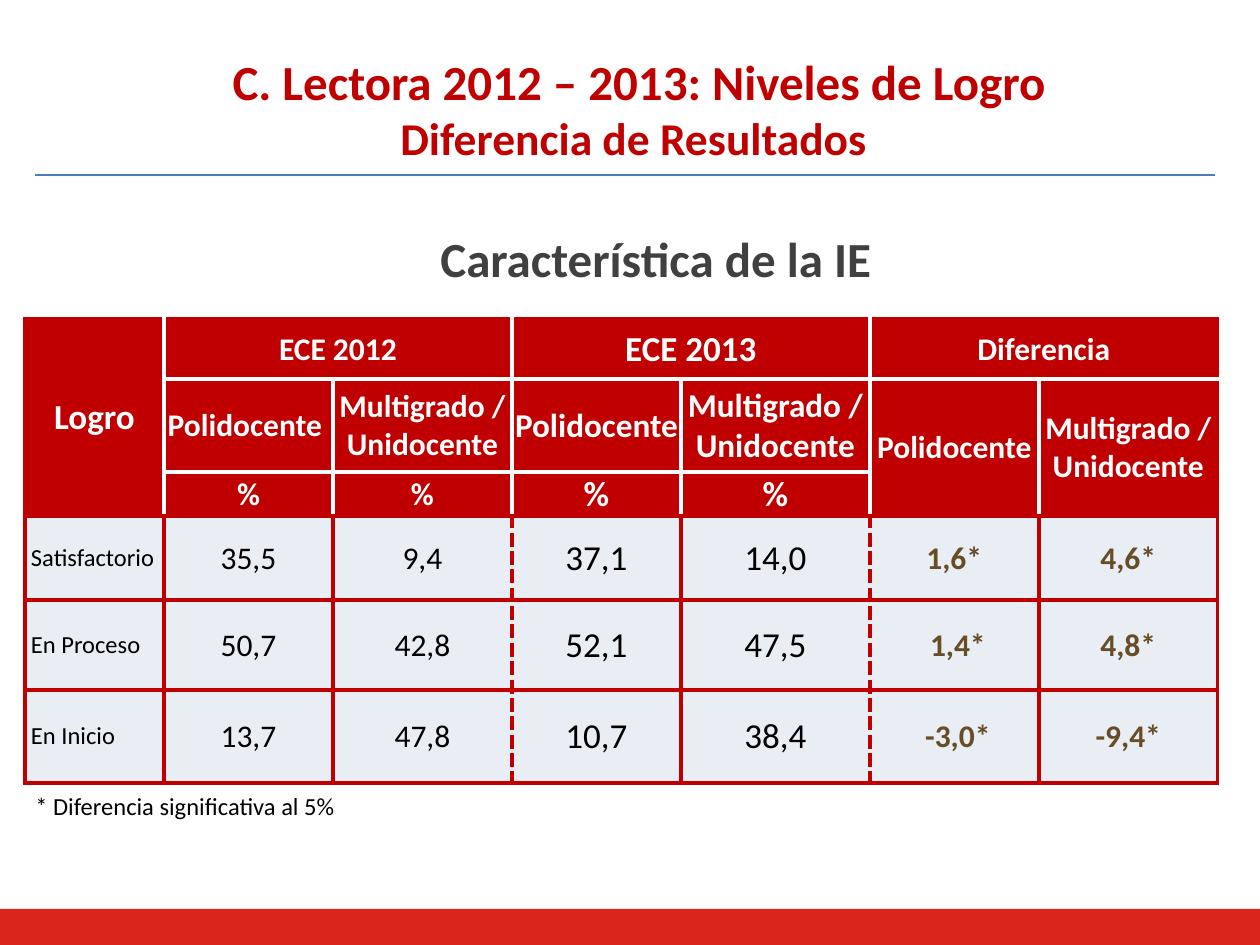
from lxml.etree import SubElement
from pptx import Presentation
from pptx.dml.color import RGBColor
from pptx.enum.shapes import MSO_CONNECTOR, MSO_SHAPE
from pptx.enum.text import MSO_ANCHOR as ANCHOR, MSO_AUTO_SIZE as AUTO_SIZE, PP_ALIGN as ALIGN
from pptx.oxml.ns import qn
from pptx.util import Pt

PX = 914400 // 126
WIDTH, HEIGHT = 1260, 945
FONT = "Calibri"
COLORS = {
    "red": "C00000", "band": "DA251D", "rule": "4B7EBC", "heading": "404040",
    "white": "FFFFFF", "black": "000000", "body": "E9EDF4", "difference": "674D26",
}

# Content
TITLE = [("C. Lectora 2012 – 2013: Niveles de Logro", 28), ("Diferencia de Resultados ", 26)]
HEADING = "Característica de la IE"
FOOTNOTE = "* Diferencia significativa al 5%"

MULTI = "Multigrado / Unidocente"
HEADER = [  # text and size in each cell; None is covered by a merge
    [("Logro", 20), ("ECE 2012", 18), None, ("ECE 2013", 20), None, ("Diferencia", 18), None],
    [None, ("Polidocente ", 18), (MULTI, 18), ("Polidocente ", 19), (MULTI, 19),
     ("Polidocente", 18), (MULTI, 18)],
    [None, ("%", 18), ("%", 18), ("%", 20), ("%", 20), None, None],
]
RESULTS = [
    ["Satisfactorio", "35,5", "9,4", "37,1", "14,0", "1,6*", "4,6*"],
    ["En Proceso", "50,7", "42,8", "52,1", "47,5", " 1,4*", "4,8*"],
    ["En Inicio", "13,7", "47,8", "10,7", "38,4", " -3,0*", "-9,4*"],
]
RESULT_SIZES = [14, 18, 18, 20, 20, 18, 18]
MERGES = [((0, 0), (2, 0)), ((0, 1), (0, 2)), ((0, 3), (0, 4)), ((0, 5), (0, 6)),
          ((1, 5), (2, 5)), ((1, 6), (2, 6))]
COLUMN_WIDTHS = [139, 169, 179, 169, 189, 169, 179]
ROW_HEIGHTS = [60, 93, 44, 84, 90, 93]
TABLE_LEFT, TABLE_TOP = 25, 319
DASHED_EDGES = (3, 5)


def rgb(name):
    return RGBColor.from_string(COLORS[name])


def write(frame, lines, color="black", bold=False, align=ALIGN.LEFT):
    for i, (text, size) in enumerate(lines):
        paragraph = frame.add_paragraph() if i else frame.paragraphs[0]
        paragraph.alignment = align
        run = paragraph.add_run()
        run.text = text
        run.font.name, run.font.size, run.font.bold = FONT, Pt(size), bold
        run.font.color.rgb = rgb(color)


def add_text(slide, box, lines, wrap=True, anchor=ANCHOR.TOP, fit=AUTO_SIZE.NONE, **style):
    frame = slide.shapes.add_textbox(*(v * PX for v in box)).text_frame
    frame.word_wrap, frame.vertical_anchor, frame.auto_size = wrap, anchor, fit
    write(frame, lines, **style)


def vertical_edge(row, x):
    """Colour and dash of the edge left of column x."""
    if 0 < x < len(COLUMN_WIDTHS):
        if row >= len(HEADER):
            return "red", "sysDash" if x in DASHED_EDGES else "solid"
        if row > 0 or x % 2:
            return "white", "solid"
    return "red", "solid"


def horizontal_edge(y, col):
    """Colour and dash of the edge above row y."""
    white = (y == 1 and col > 0) or (y == 2 and 0 < col < 5)
    return "white" if white else "red", "solid"


def draw_borders(cell, row, col):
    edges = {"lnL": vertical_edge(row, col), "lnR": vertical_edge(row, col + 1),
             "lnT": horizontal_edge(row, col), "lnB": horizontal_edge(row + 1, col)}
    properties = cell._tc.get_or_add_tcPr()
    for tag, (color, dash) in edges.items():
        line = SubElement(properties, qn("a:" + tag), w=str(Pt(2.25)))
        SubElement(SubElement(line, qn("a:solidFill")), qn("a:srgbClr"), val=COLORS[color])
        SubElement(line, qn("a:prstDash"), val=dash)


def add_results_table(slide):
    rows = HEADER + [list(zip(row, RESULT_SIZES)) for row in RESULTS]
    table = slide.shapes.add_table(
        len(rows), len(COLUMN_WIDTHS), TABLE_LEFT * PX, TABLE_TOP * PX,
        sum(COLUMN_WIDTHS) * PX, sum(ROW_HEIGHTS) * PX).table
    table.first_row = table.horz_banding = False
    for column, width in zip(table.columns, COLUMN_WIDTHS):
        column.width = width * PX
    for table_row, height in zip(table.rows, ROW_HEIGHTS):
        table_row.height = height * PX
    for first, last in MERGES:
        table.cell(*first).merge(table.cell(*last))

    for r, row in enumerate(rows):
        in_header = r < len(HEADER)
        for c, entry in enumerate(row):
            cell = table.cell(r, c)
            is_label = c == 0 and not in_header
            draw_borders(cell, r, c)
            cell.fill.solid()
            cell.fill.fore_color.rgb = rgb("red" if in_header else "body")
            cell.vertical_anchor = ANCHOR.MIDDLE
            cell.margin_left = cell.margin_right = (6 if is_label else 1) * PX
            cell.margin_top, cell.margin_bottom = (0 if is_label else PX), 0
            if entry:
                color = "white" if in_header else "difference" if c >= 5 else "black"
                write(cell.text_frame, [entry], color=color, bold=color != "black",
                      align=ALIGN.LEFT if is_label else ALIGN.CENTER)


def main():
    deck = Presentation()
    deck.slide_width, deck.slide_height = WIDTH * PX, HEIGHT * PX
    slide = deck.slides.add_slide(deck.slide_layouts[6])

    # Bottom band
    band = slide.shapes.add_shape(MSO_SHAPE.RECTANGLE, 0, 909 * PX, WIDTH * PX, 36 * PX)
    band.shadow.inherit = False
    band.fill.solid()
    band.fill.fore_color.rgb = rgb("band")
    band.line.fill.background()

    # Title and rule
    add_text(slide, (123, 29, 1032, 158), TITLE, anchor=ANCHOR.MIDDLE,
             color="red", bold=True, align=ALIGN.CENTER)
    rule = slide.shapes.add_connector(MSO_CONNECTOR.STRAIGHT, 35 * PX, 175 * PX, 1215 * PX, 175 * PX)
    rule.line.color.rgb, rule.line.width = rgb("rule"), Pt(0.75)
    SubElement(rule._element.spPr, qn("a:effectLst"))

    # Heading, table and footnote
    add_text(slide, (428, 222, 462, 72), [(HEADING, 28)], wrap=False,
             fit=AUTO_SIZE.SHAPE_TO_FIT_TEXT, color="heading", bold=True)
    add_results_table(slide)
    add_text(slide, (23, 785, 808, 43), [(FOOTNOTE, 14)], fit=AUTO_SIZE.SHAPE_TO_FIT_TEXT)

    deck.save("out.pptx")


if __name__ == "__main__":
    main()
